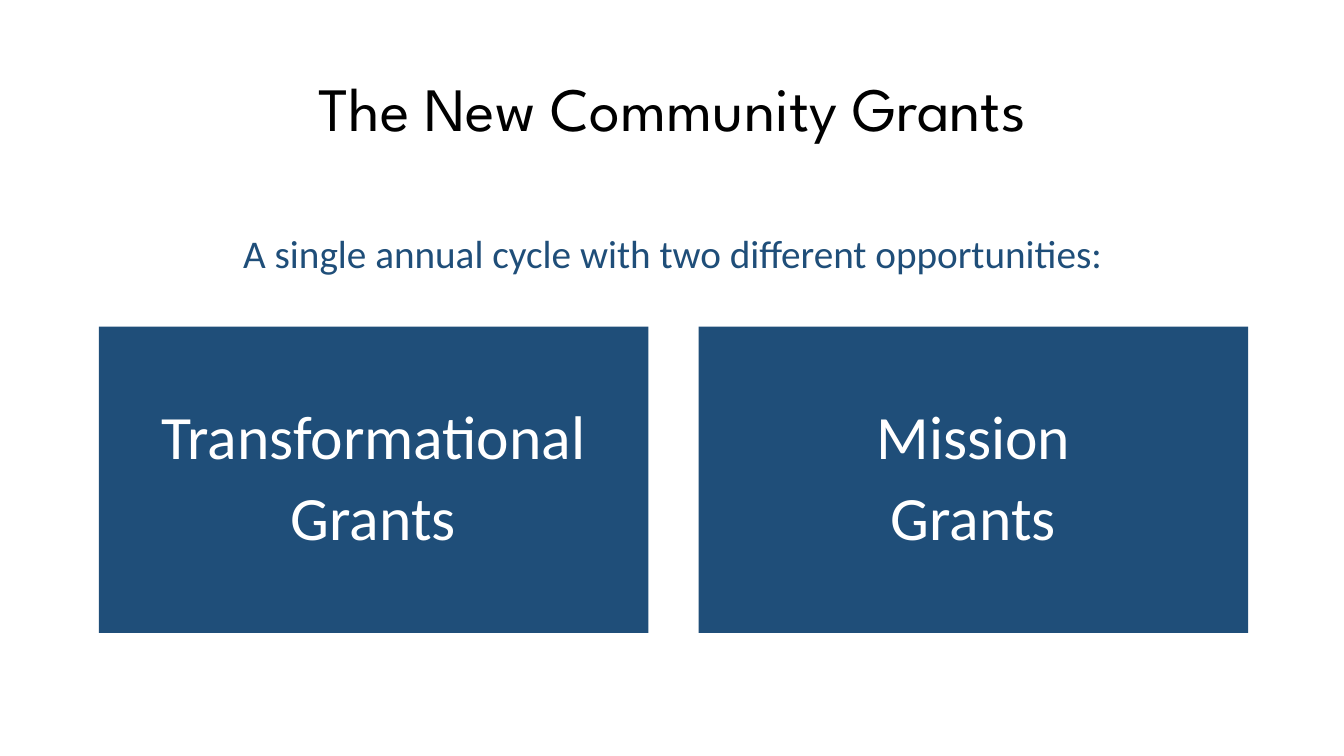
from pptx import Presentation
from pptx import util as u
from pptx.dml.color import RGBColor
from pptx.enum import shapes, text

COLORS = {"blue": "1F4E79", "white": "FFFFFF", "black": "000000"}


def write_text(frame, content, *, size, color, font="Calibri", space_before=0,
               anchor=text.MSO_ANCHOR.MIDDLE):
    frame.word_wrap = True
    frame.vertical_anchor = anchor
    for index, line in enumerate(content.split("\n")):
        paragraph = frame.add_paragraph() if index else frame.paragraphs[0]
        paragraph.alignment = text.PP_ALIGN.CENTER
        paragraph.line_spacing = 0.9
        paragraph.space_before = u.Pt(space_before)
        run = paragraph.add_run()
        run.text = line
        run.font.name = font
        run.font.size = u.Pt(size)
        run.font.color.rgb = RGBColor.from_string(COLORS[color])


class GrantSlide:
    heading_font = "League Spartan"
    large, medium = 44, 28
    body_spacing = 10

    def __init__(self, presentation):
        self.slide = presentation.slides.add_slide(presentation.slide_layouts[6])

    def label(self, content, left, top, width, height, **text_format):
        shape = self.slide.shapes.add_textbox(
            *map(u.Inches, (left, top, width, height)))
        write_text(shape.text_frame, content, **text_format)

    def title(self, content):
        self.label(content, 0.92, 0.38, 11.5, 1.45, size=self.large,
                   color="black", font=self.heading_font)

    def subtitle(self, content):
        self.label(content, 1.04, 2.28, 11.26, 0.53, size=self.medium,
                   color="blue", space_before=self.body_spacing,
                   anchor=text.MSO_ANCHOR.TOP)

    def panel(self, content, left, top, width, height):
        shape = self.slide.shapes.add_shape(
            shapes.MSO_SHAPE.RECTANGLE,
            *map(u.Inches, (left, top, width, height)))
        shape.shadow.inherit = False
        shape.fill.solid()
        shape.fill.fore_color.rgb = RGBColor.from_string(COLORS["blue"])
        shape.line.fill.background()
        write_text(shape.text_frame, content, size=self.large, color="white",
                   space_before=self.body_spacing)


def main():
    presentation = Presentation()
    presentation.slide_width = u.Inches(13.33)
    presentation.slide_height = u.Inches(7.5)

    slide = GrantSlide(presentation)
    slide.title("The New Community Grants")
    slide.subtitle("A single annual cycle with two different opportunities:")

    panel_width, gap = 5.45, 0.5
    for column, grant in enumerate(("Transformational", "Mission")):
        left = 0.98 + column * (panel_width + gap)
        slide.panel(f"{grant}\nGrants", left, 3.24, panel_width, 3.04)

    presentation.save("out.pptx")


if __name__ == "__main__":
    main()
